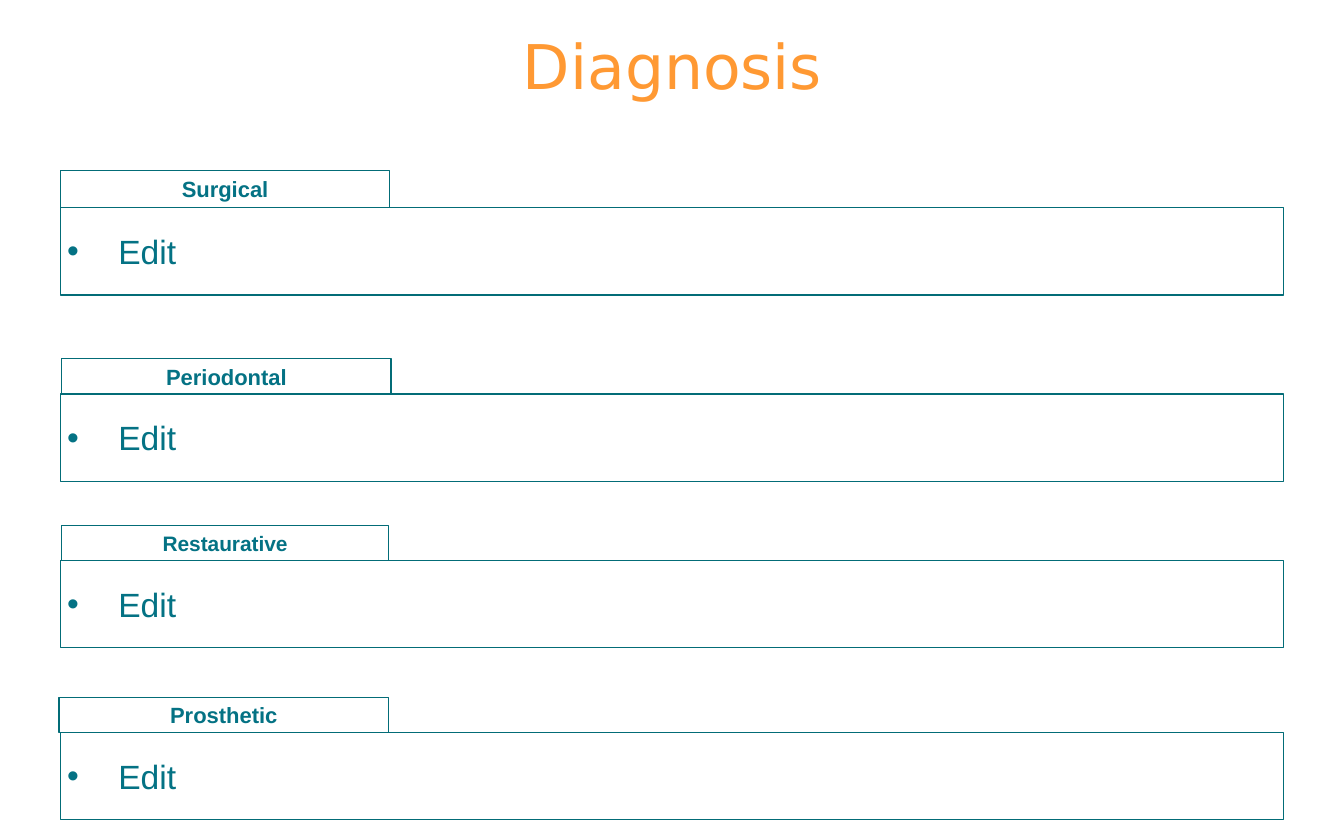
"""Build the Diagnosis slide: four titled boxes, each with a bullet list."""
from dataclasses import dataclass

from lxml.etree import SubElement
from pptx import Presentation
from pptx.dml.color import RGBColor
from pptx.enum.shapes import MSO_SHAPE as Shape
from pptx.enum.text import MSO_ANCHOR as Anchor, MSO_AUTO_SIZE as Fit, PP_ALIGN as Align
from pptx.oxml.ns import qn
from pptx.util import Pt

ORANGE = RGBColor(0xFF, 0x99, 0x33)
TEAL = RGBColor(0x04, 0x72, 0x84)
EDGE = RGBColor(0x03, 0x6C, 0x77)
LEFT, WIDTH, HEIGHT = 32.4, 655.2, 46.8
INSET, INDENT = 3.6, 27.4


@dataclass
class Part:
    name: str
    top: float
    left: float = LEFT
    width: float = 176.4
    height: float = 18.8
    size: float = 11.8
    text: str = "Edit"


PARTS = [
    Part("Surgical", 111.2, height=19.8),
    Part("Periodontal", 211, left=33.1),
    Part("Restaurative", 300.2, left=33.1, width=175, size=11.2),
    Part("Prosthetic", 392.4, left=31.7),
]


def place(shape, left: float, top: float, width: float, height: float) -> None:
    """Set the position and size of a shape."""
    shape.left, shape.top = Pt(left), Pt(top)
    shape.width, shape.height = Pt(width), Pt(height)


def edge(shape) -> None:
    """Give a shape a thin outline and no fill."""
    shape.fill.background()
    shape.line.color.rgb = EDGE
    shape.line.width = Pt(0.75)


def write(shape, text: str, size: float, color: RGBColor, align: Align,
          font: str = "Arial", bold: bool = False, gap: float = 0):
    """Write one run into a shape and return its paragraph."""
    frame = shape.text_frame
    frame.word_wrap = True
    frame.auto_size = Fit.NONE
    frame.vertical_anchor = Anchor.MIDDLE
    frame.margin_left = frame.margin_right = Pt(INSET)
    frame.margin_top = frame.margin_bottom = Pt(INSET)
    para = frame.paragraphs[0]
    para.alignment = align
    para.space_before = Pt(gap)
    run = para.add_run()
    run.text = text
    run.font.name = font
    run.font.size = Pt(size)
    run.font.bold = bold
    run.font.color.rgb = color
    return para


def bullet(para) -> None:
    """Add a bullet with a hanging indent to a paragraph."""
    props = para._p.get_or_add_pPr()
    props.set("marL", str(Pt(INDENT)))
    props.set("indent", str(-Pt(INDENT)))
    SubElement(props, qn("a:buFont"), typeface="Arial")
    SubElement(props, qn("a:buChar"), char="•")


def draw(slide, body, part: Part) -> None:
    """Draw one list box with its tab on top."""
    place(body, LEFT, part.top, WIDTH, HEIGHT)
    edge(body)
    bullet(write(body, part.text, 18, TEAL, Align.LEFT, gap=5))
    tab = slide.shapes.add_shape(
        Shape.RECTANGLE, Pt(part.left), Pt(part.top - part.height),
        Pt(part.width), Pt(part.height))
    tab.shadow.inherit = False
    edge(tab)
    write(tab, part.name, part.size, TEAL, Align.CENTER, bold=True, gap=6)


def main() -> None:
    """Build and save the deck."""
    deck = Presentation()
    deck.slide_width, deck.slide_height = Pt(720), Pt(450)
    slide = deck.slides.add_slide(deck.slide_layouts.get_by_name("Comparison"))
    title, *bodies = slide.placeholders
    place(title, 11.5, 10.8, 697.7, 47.5)
    write(title, "Diagnosis", 33, ORANGE, Align.CENTER, font="DejaVu Sans")
    for body, part in zip(bodies, PARTS):
        draw(slide, body, part)
    deck.save("out.pptx")


if __name__ == "__main__":
    main()
